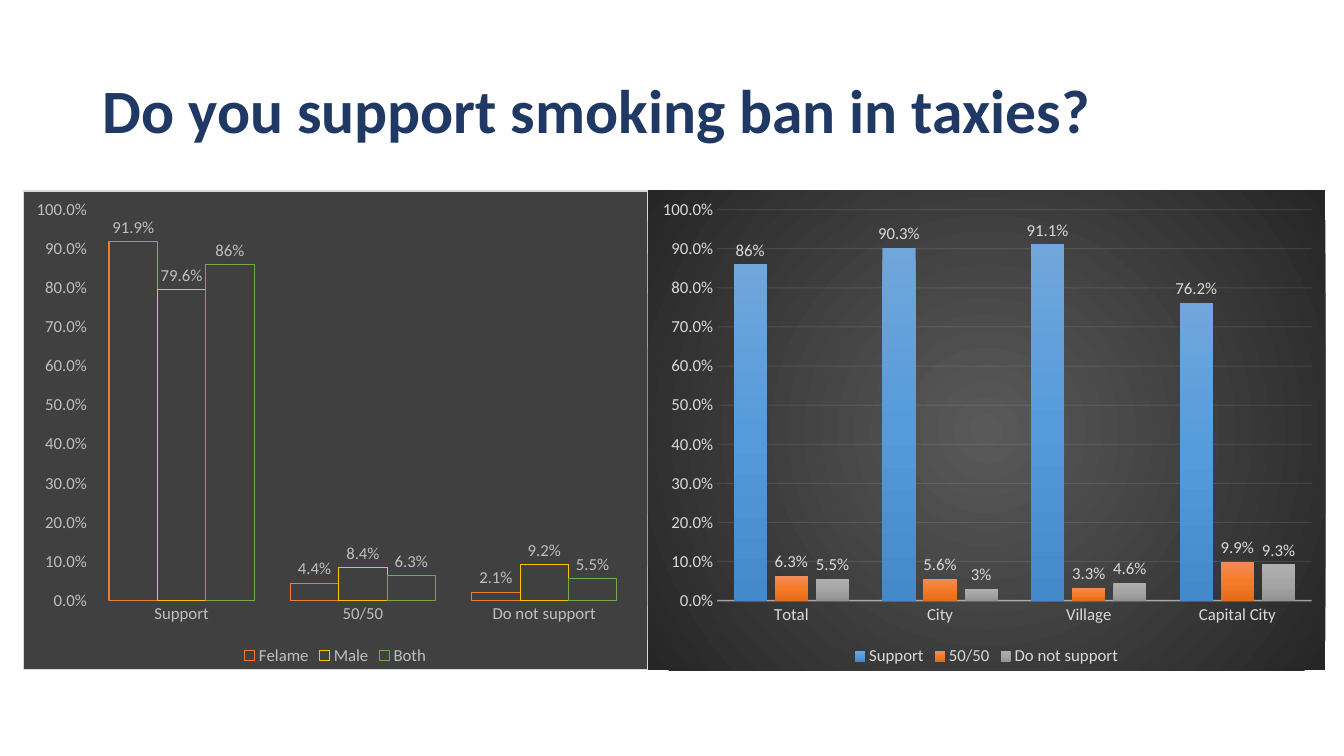
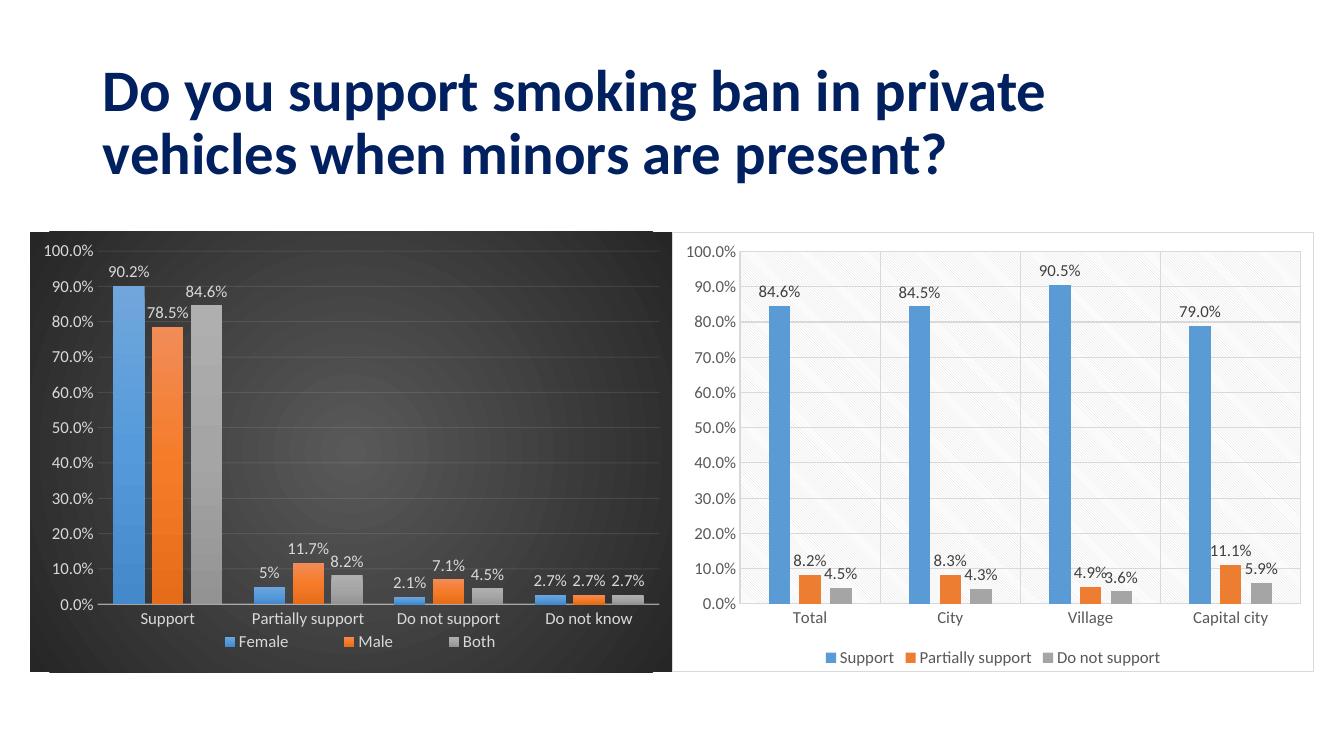
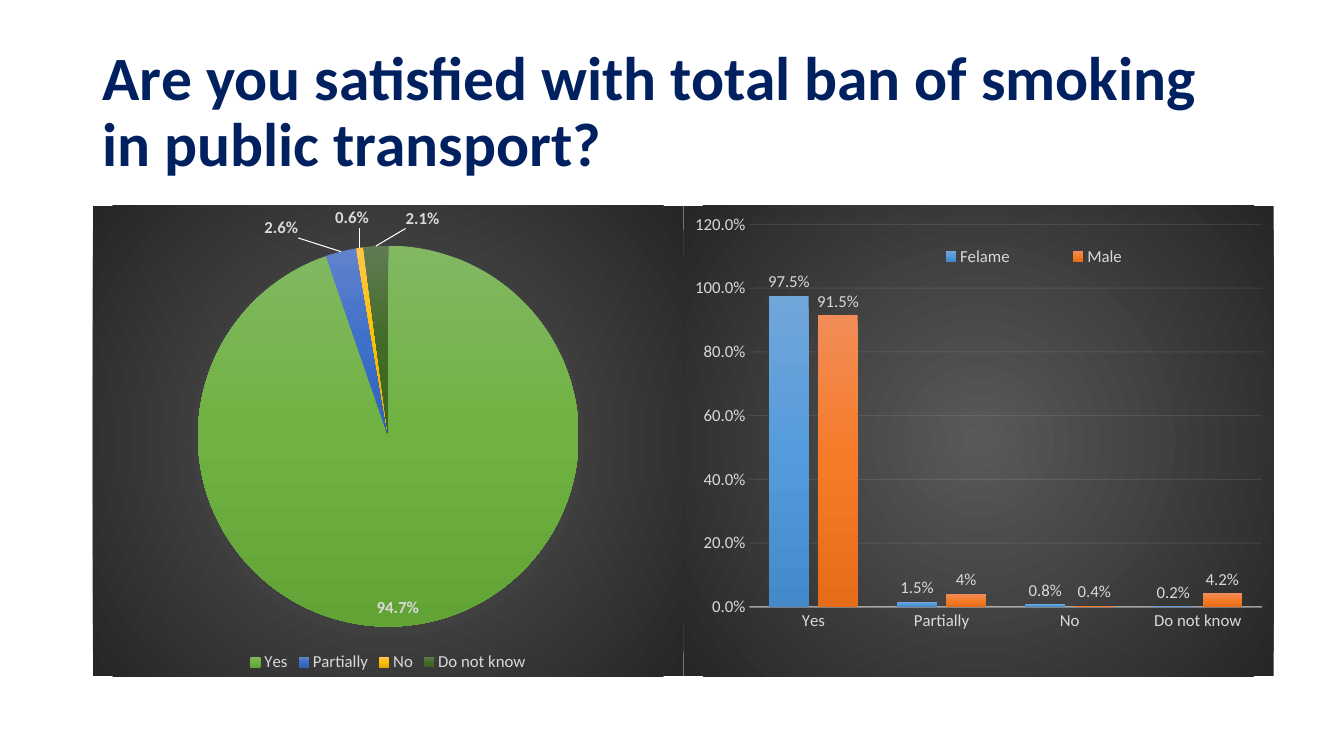
import pptx
import pptx.chart.data
import pptx.dml.color
import pptx.enum.chart
import pptx.enum.text
import pptx.oxml
import pptx.oxml.ns
import pptx.util

Cm = pptx.util.Cm
Pt = pptx.util.Pt
XL = pptx.enum.chart


def rgb(value):
    return pptx.dml.color.RGBColor.from_string(value)


def xml(tag, body):
    ns = pptx.oxml.ns.nsdecls("a", "c")
    return pptx.oxml.parse_xml(f"<{tag} {ns}>{body}</{tag}>")


SOLID = '<a:solidFill><a:srgbClr val="{}"/></a:solidFill>'
STOP = '<a:gs pos="{}"><a:srgbClr val="{}"/></a:gs>'
LAYOUT = "<c:manualLayout>{}</c:manualLayout>"
BORDER = '<a:ln w="9525">' + SOLID.format("D9D9D9") + "</a:ln>"
NO_BORDER = "<a:ln><a:noFill/></a:ln>"
RADIAL = (
    '<a:gradFill rotWithShape="1"><a:gsLst>'
    + STOP.format(0, "595959") + STOP.format(100000, "262626")
    + '</a:gsLst><a:path path="circle">'
    + '<a:fillToRect l="50000" t="50000" r="50000" b="50000"/></a:path></a:gradFill>'
)
HATCH = (
    '<a:pattFill prst="ltDnDiag"><a:fgClr><a:srgbClr val="D9D9D9"/></a:fgClr>'
    '<a:bgClr><a:srgbClr val="FFFFFF"/></a:bgClr></a:pattFill>'
)

BLUE = ("71A6DB", "559BDB", "448ACA")
ORANGE = ("F18C57", "F67B28", "E56C19")
GRAY = ("AFAFAF", "A5A5A5", "939393")
GREEN = ("81B861", "6FB242", "62A336")
INDIGO = ("6183CB", "3E70CA", "3062BB")
GOLD = ("FFC64B", "FFC000", "E3AB00")
FOREST = ("607B53", "436B28", "3B6220")

FONT = {"size": Pt(12), "name": "Calibri", "bold": False}
TITLE_FONT = {"name": "Calibri", "bold": True}

DARK = {
    "fill": RADIAL + NO_BORDER, "text": "D9D9D9", "label": "D9D9D9",
    "gap": 100, "overlap": -24, "colors": [BLUE, ORANGE, GRAY],
    "axis": ("F2F2F2", 1), "axis_alpha": 54, "grid": "F2F2F2", "grid_alpha": 10,
}
OUTLINE = {
    "fill": SOLID.format("404040") + BORDER, "text": "BFBFBF", "label": "BFBFBF",
    "gap": 75, "overlap": 0, "colors": ["ED7D31", "FFC000", "70AD47"], "outline": True,
}
LIGHT = {
    "fill": SOLID.format("FFFFFF") + BORDER, "text": "595959", "label": "404040",
    "gap": 267, "overlap": -43, "colors": ["5B9BD5", "ED7D31", "A5A5A5"],
    "axis": ("D9D9D9", 0.75), "grid": "D9D9D9", "cat_grid": True, "hatch": True,
}
PIE = {
    "fill": RADIAL + NO_BORDER, "text": "D9D9D9", "label": "D9D9D9", "pie": True,
    "colors": [GREEN, INDIGO, GOLD, FOREST],
    "offsets": {1: (-7, -1.7), 2: (1.7, -3), 3: (8, -2.5)},
}

slides = [
    {
        "title": "Do you support smoking ban in taxies?",
        "color": "203864", "size": 44, "box": (1.02, 3.68),
        "charts": [
            {
                "style": OUTLINE, "at": (0.58, 4.8, 15.75, 12.09),
                "plot": (10.8, 4, 87.2, 81.5),
                "cats": ["Support", "50/50", "Do not support"],
                "series": {
                    "Felame": [0.919, 0.044, 0.021],
                    "Male": [0.796, 0.084, 0.092],
                    "Both": [0.86, 0.063, 0.055],
                },
                "short": {("Both", 0): "86%"},
            },
            {
                "style": DARK, "at": (16.33, 4.8, 17.07, 12.09),
                "plot": (10.2, 4, 87.8, 81.5),
                "cats": ["Total", "City", "Village", "Capital City"],
                "series": {
                    "Support": [0.86, 0.903, 0.911, 0.762],
                    "50/50": [0.063, 0.056, 0.033, 0.099],
                    "Do not support": [0.055, 0.03, 0.046, 0.093],
                },
                "short": {("Support", 0): "86%", ("Do not support", 1): "3%"},
            },
        ],
    },
    {
        "title": "Do you support smoking ban in private vehicles when minors are present?",
        "color": "002060", "size": 42, "box": (1.37, 3.5),
        "charts": [
            {
                "style": DARK, "at": (0.76, 5.84, 16.18, 11.1),
                "plot": (10.5, 4.4, 87.5, 80.2), "legend": (22.5, 89.6, 57.8, 7),
                "cats": ["Support", "Partially support", "Do not support", "Do not know"],
                "series": {
                    "Female": [0.902, 0.05, 0.021, 0.027],
                    "Male": [0.785, 0.117, 0.071, 0.027],
                    "Both": [0.846, 0.082, 0.045, 0.027],
                },
                "short": {("Female", 1): "5%"},
            },
            {
                "style": LIGHT, "at": (16.94, 5.84, 16.18, 11.1),
                "plot": (10.5, 4.4, 87.5, 80.2),
                "cats": ["Total", "City", "Village", "Capital city"],
                "series": {
                    "Support": [0.846, 0.845, 0.905, 0.79],
                    "Partially support": [0.082, 0.083, 0.049, 0.111],
                    "Do not support": [0.045, 0.043, 0.036, 0.059],
                },
            },
        ],
    },
    {
        "title": "Are you satisfied with total ban of smoking in public transport?",
        "color": "002060", "size": 44, "box": (1.02, 3.68),
        "charts": [
            {
                "style": PIE, "at": (2.34, 5.18, 14.88, 11.86),
                "plot": (17.8, 8.5, 64.5, 81),
                "cats": ["Yes", "Partially", "No", "Do not know"],
                "series": {"Series 1": [0.947, 0.026, 0.006, 0.021]},
            },
            {
                "style": DARK, "at": (17.22, 5.18, 14.88, 11.86),
                "plot": (11.2, 4, 86.8, 81.3), "legend": (34.7, 6.8, 49.4, 8),
                "top": 1.2, "step": 0.2,
                "cats": ["Yes", "Partially", "No", "Do not know"],
                "series": {
                    "Felame": [0.975, 0.015, 0.008, 0.002],
                    "Male": [0.915, 0.04, 0.004, 0.042],
                },
                "short": {("Male", 1): "4%"},
            },
        ],
    },
]

prs = pptx.Presentation()
prs.slide_width, prs.slide_height = Cm(33.87), Cm(19.05)

for page in slides:
    s = prs.slides.add_slide(prs.slide_layouts[6])
    top, height = page["box"]
    tf = s.shapes.add_textbox(Cm(2.34), Cm(top), Cm(29.21), Cm(height)).text_frame
    tf.word_wrap = True
    tf.vertical_anchor = pptx.enum.text.MSO_ANCHOR.MIDDLE
    p = tf.paragraphs[0]
    p.line_spacing = 0.9
    r = p.add_run()
    r.text = page["title"]
    for key, value in TITLE_FONT.items():
        setattr(r.font, key, value)
    r.font.size = Pt(page["size"])
    r.font.color.rgb = rgb(page["color"])

    for spec_ in page["charts"]:
        style = spec_["style"]
        pie = style.get("pie", False)
        data = pptx.chart.data.CategoryChartData(number_format="0.0%")
        data.categories = spec_["cats"]
        for name, values in spec_["series"].items():
            data.add_series(name, values)
        kind = XL.XL_CHART_TYPE.PIE if pie else XL.XL_CHART_TYPE.COLUMN_CLUSTERED
        chart = s.shapes.add_chart(kind, *map(Cm, spec_["at"]), data).chart
        root = chart.element
        plot = chart.plots[0]
        plot.vary_by_categories = pie
        chart.has_title = False
        chart.has_legend = True
        chart.legend.position = XL.XL_LEGEND_POSITION.BOTTOM
        chart.legend.include_in_layout = False
        fonts = [(chart.font, style["text"], False)]

        if not pie:
            plot.gap_width, plot.overlap = style["gap"], style["overlap"]
            cat, val = chart.category_axis, chart.value_axis
            val_values = {
                "minimum_scale": 0,
                "maximum_scale": spec_.get("top", 1),
                "major_unit": spec_.get("step", 0.1),
                "has_major_gridlines": "grid" in style,
            }
            for key, value in val_values.items():
                setattr(val, key, value)
            val.tick_labels.number_format = "0.0%"
            val.tick_labels.number_format_is_linked = False
            cat.has_major_gridlines = style.get("cat_grid", False)
            for axis in (cat, val):
                axis.major_tick_mark = XL.XL_TICK_MARK.NONE
                axis.format.line.fill.background()
                if axis.has_major_gridlines:
                    line = axis.major_gridlines.format.line
                    line.color.rgb, line.width = rgb(style["grid"]), Pt(0.75)
            if "axis" in style:
                color, width = style["axis"]
                cat.format.line.color.rgb, cat.format.line.width = rgb(color), Pt(width)
            alphas = {"c:catAx/c:spPr": "axis_alpha", "c:valAx/c:majorGridlines": "grid_alpha"}
            for place, key in alphas.items():
                if key in style:
                    clr = root.xpath(f".//{place}//a:srgbClr")[0]
                    clr.append(xml("a:alpha", ""))
                    clr[-1].set("val", str(style[key] * 1000))

        for ser in plot.series:
            dl = ser.data_labels
            dl.show_value = True
            dl.number_format, dl.number_format_is_linked = "0.0%", False
            dl.position = XL.XL_LABEL_POSITION.OUTSIDE_END
            fonts.append((dl.font, style["label"], pie))
            for (name, i), text in spec_.get("short", {}).items():
                if name == ser.name:
                    label = ser.points[i].data_label
                    r = label.text_frame.paragraphs[0].add_run()
                    r.text = text
                    label.position = XL.XL_LABEL_POSITION.OUTSIDE_END
                    fonts.append((r.font, style["label"], False))

        targets = list(plot.series)
        if pie:
            targets = [plot.series[0].points[i] for i in range(len(spec_["cats"]))]
            for i, point in enumerate(targets):
                label = point.data_label
                label.position = XL.XL_LABEL_POSITION.OUTSIDE_END
                if i not in style["offsets"]:
                    label.position = XL.XL_LABEL_POSITION.INSIDE_END
                fonts.append((label.font, style["label"], True))
            for i, (dx, dy) in style["offsets"].items():
                body = f'<c:x val="{dx / 100:.3f}"/><c:y val="{dy / 100:.3f}"/>'
                idx = root.xpath(f".//c:dLbl/c:idx[@val='{i}']")[0]
                idx.addnext(xml("c:layout", LAYOUT.format(body)))
            leader = '<c:spPr><a:ln w="9525">' + SOLID.format("FFFFFF") + "</a:ln></c:spPr>"
            root.xpath(".//c:ser/c:dLbls")[0].append(xml("c:leaderLines", leader))

        for target, color in zip(targets, style["colors"]):
            fill, line = target.format.fill, target.format.line
            if style.get("outline"):
                fill.background()
                line.color.rgb, line.width = rgb(color), Pt(0.75)
            else:
                fill.solid()
                line.fill.background()
                if isinstance(color, str):
                    fill.fore_color.rgb = rgb(color)
        if isinstance(style["colors"][0], tuple):
            shapes = root.xpath(".//c:ser/c:spPr | .//c:dPt/c:spPr")
            for sp, colors in zip(shapes, style["colors"]):
                stops = "".join(STOP.format(i * 50000, c) for i, c in enumerate(colors))
                body = f'<a:gsLst>{stops}</a:gsLst><a:lin ang="5400000" scaled="0"/>'
                sp.replace(sp[0], xml("a:gradFill", body))

        for font, color, bold in fonts:
            for key, value in {**FONT, "bold": bold}.items():
                setattr(font, key, value)
            font.color.rgb = rgb(color)

        area = root.xpath(".//c:plotArea")[0]
        for old in area.xpath("c:layout"):
            area.remove(old)
        for part in ("plot", "legend"):
            if part in spec_:
                body = '<c:layoutTarget val="inner"/>' if part == "plot" else ""
                body += '<c:xMode val="edge"/><c:yMode val="edge"/>'
                for key, value in zip("xywh", spec_[part]):
                    body += f'<c:{key} val="{value / 100:.3f}"/>'
                layout = xml("c:layout", LAYOUT.format(body))
                if part == "plot":
                    area.insert(0, layout)
                else:
                    root.xpath(".//c:legend/c:legendPos")[0].addnext(layout)
        if style.get("hatch"):
            area.append(xml("c:spPr", HATCH + BORDER))
        root.xpath("c:chart")[0].addnext(xml("c:spPr", style["fill"]))

prs.save("out.pptx")
